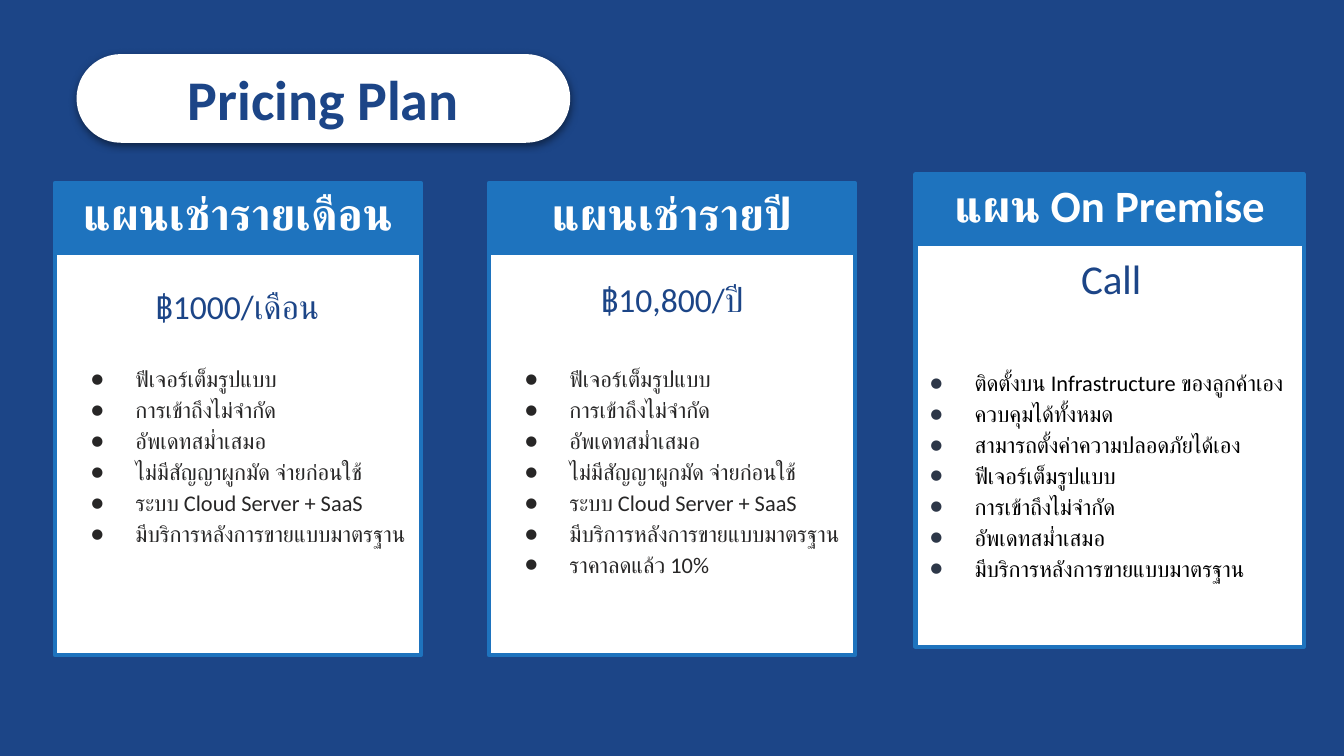
from lxml import etree
from pptx import Presentation
from pptx.dml.color import RGBColor
from pptx.enum.shapes import MSO_SHAPE
from pptx.enum.text import MSO_ANCHOR, MSO_AUTO_SIZE, PP_ALIGN
from pptx.oxml.ns import qn
from pptx.util import Pt

RECT = MSO_SHAPE.RECTANGLE
ROUNDED = MSO_SHAPE.ROUNDED_RECTANGLE
TOP = MSO_ANCHOR.TOP
GROW = MSO_AUTO_SIZE.SHAPE_TO_FIT_TEXT
LEFT = PP_ALIGN.LEFT
CENTER = PP_ALIGN.CENTER

NAVY, BLUE, WHITE = "1C4587", "1E73BE", "FFFFFF"
INK, SLATE, BLACK = "272626", "2D3748", "000000"

CORE = ["ฟีเจอร์เต็มรูปแบบ", "การเข้าถึงไม่จำกัด", "อัพเดทสม่ำเสมอ"]
SERVICE = "มีบริการหลังการขายแบบมาตรฐาน"
RENTAL = CORE + ["ไม่มีสัญญาผูกมัด จ่ายก่อนใช้", "ระบบ Cloud Server + SaaS", SERVICE]
ON_PREMISE = [
    "ติดตั้งบน Infrastructure ของลูกค้าเอง",
    "ควบคุมได้ทั้งหมด",
    "สามารถตั้งค่าความปลอดภัยได้เอง",
] + CORE + [SERVICE]

PLANS = [
    dict(box=(29.5, 98, 196), name="แผนเช่ารายเดือน",
         price="฿1000/เดือน", price_box=(29, 142.5, 196.5, 36), price_size=18, spacing=1.15,
         features=RENTAL, list_box=(29.5, 186.5, 196, 160.5), ink=INK, bullet=INK),
    dict(box=(262, 98, 196), name="แผนเช่ารายปี",
         price="฿10,800/ปี", price_box=(262, 142, 196.5, 36), price_size=18, spacing=1,
         features=RENTAL + ["ราคาลดแล้ว 10%"], list_box=(262, 186.5, 196, 146),
         ink=INK, bullet=INK),
    dict(box=(490.5, 93.5, 208), name="แผน On Premise",
         price="Call", price_box=(490.5, 124.5, 209.5, 41), price_size=22, spacing=1.15,
         features=ON_PREMISE, list_box=(479, 188.5, 216, 163), ink=BLACK, bullet=SLATE),
]


def rgb(value):
    return RGBColor.from_string(value)


class Deck:
    font = "Calibri"
    inset = Pt(7.2)

    def __init__(self, s):
        self.s = s

    def shape(self, kind, box, fill, line=None, width=0):
        sp = self.s.shapes.add_shape(kind, *map(Pt, box))
        sp.shadow.inherit = False
        sp.fill.solid()
        sp.fill.fore_color.rgb = rgb(fill)
        if line:
            sp.line.color.rgb = rgb(line)
            sp.line.width = Pt(width)
        else:
            sp.line.fill.background()
        return sp

    def label(self, sp, lines, size, color, bold=False, align=CENTER, spacing=1, after=0, bullet=None):
        tf = sp.text_frame
        tf.text = "\n".join(lines)
        tf.word_wrap = True
        tf.auto_size = GROW
        tf.vertical_anchor = TOP
        tf.margin_left = tf.margin_right = tf.margin_top = tf.margin_bottom = self.inset
        for p in tf.paragraphs:
            p.alignment = align
            p.line_spacing = spacing
            p.space_after = Pt(after)
            if bullet:
                self.bullet(p, bullet)
            for r in p.runs:
                r.font.name = self.font
                r.font.size = Pt(size)
                r.font.bold = bold
                r.font.color.rgb = rgb(color)
                etree.SubElement(r.font._element, qn("a:cs"), typeface=self.font)

    def bullet(self, p, color):
        pPr = p._p.get_or_add_pPr()
        pPr.set("marL", str(Pt(36)))
        pPr.set("indent", str(-Pt(24)))
        clr = etree.SubElement(pPr, qn("a:buClr"))
        etree.SubElement(clr, qn("a:srgbClr"), val=color)
        etree.SubElement(pPr, qn("a:buFont"), typeface=self.font)
        etree.SubElement(pPr, qn("a:buChar"), char="●")

    def text(self, box, lines, size, color, **style):
        self.label(self.s.shapes.add_textbox(*map(Pt, box)), lines, size, color, **style)

    def shadow(self, sp, color, blur, dist, alpha):
        effects = sp._element.spPr.find(qn("a:effectLst"))
        outer = etree.SubElement(effects, qn("a:outerShdw"), blurRad=str(Pt(blur)),
                                 dist=str(Pt(dist)), dir="5400000", algn="bl", rotWithShape="0")
        clr = etree.SubElement(outer, qn("a:srgbClr"), val=color)
        etree.SubElement(clr, qn("a:alpha"), val=str(alpha * 1000))

    def title(self, text):
        sp = self.shape(ROUNDED, (41, 29, 264.5, 47.5), WHITE)
        sp.adjustments[0] = 0.5
        self.shadow(sp, BLACK, 4.5, 1.5, 50)
        self.text((41, 27.5, 264.5, 51), [text], 30, NAVY, bold=True)

    def plan(self, box, name, price, price_box, price_size, spacing, features, list_box, ink, bullet):
        self.shape(RECT, (*box, 253), WHITE, BLUE, 2.25)
        header = self.shape(RECT, (*box, 38), BLUE, BLUE, 0.75)
        self.label(header, [name], 24, WHITE, bold=True, spacing=0.8, after=18)
        self.text(list_box, features, 12, ink, align=LEFT, spacing=1.15, bullet=bullet)
        self.text(price_box, [price], price_size, NAVY, spacing=spacing, after=26)


def main():
    prs = Presentation()
    prs.slide_width, prs.slide_height = Pt(720), Pt(405)
    s = prs.slides.add_slide(prs.slide_layouts[6])
    s.background.fill.solid()
    s.background.fill.fore_color.rgb = rgb(NAVY)
    deck = Deck(s)
    deck.title("Pricing Plan")
    for plan in PLANS:
        deck.plan(**plan)
    prs.save("out.pptx")


if __name__ == "__main__":
    main()
